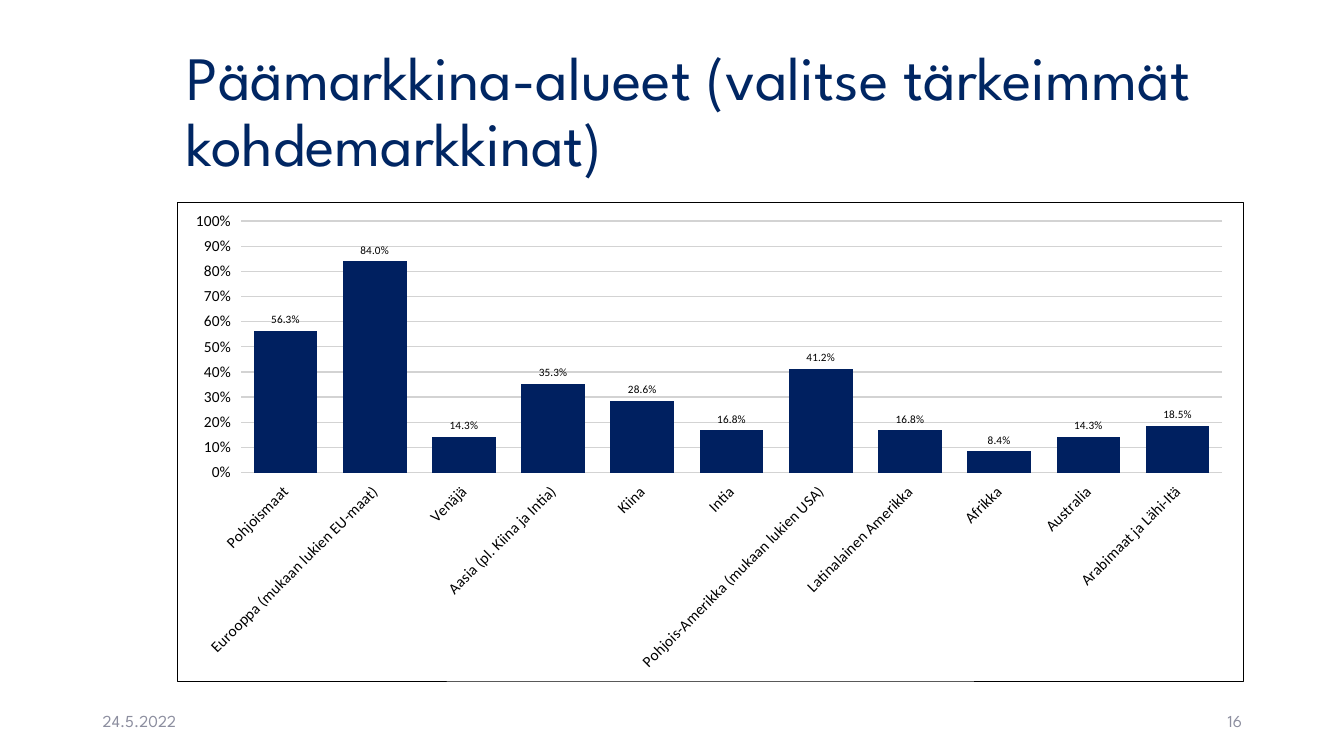
from dataclasses import dataclass

from lxml import etree
from pptx import Presentation
from pptx.chart.data import CategoryChartData
from pptx.dml.color import RGBColor
from pptx.enum.chart import XL_CHART_TYPE as ChartType
from pptx.enum.chart import XL_LABEL_POSITION as LabelPos
from pptx.enum.chart import XL_TICK_MARK as Tick
from pptx.enum.text import MSO_ANCHOR as Anchor
from pptx.enum.text import PP_ALIGN as Align
from pptx.oxml import parse_xml
from pptx.oxml.ns import nsdecls, qn
from pptx.util import Cm, Pt

NAVY, GREY = "002663", "8C8E9F"


@dataclass
class Label:
    text: str
    left: float
    top: float
    width: float
    height: float
    size: float
    color: str
    align: Align = Align.LEFT
    spacing: float = 1.0


@dataclass
class Market:
    name: str
    share: float


LABELS = [
    Label("Päämarkkina-alueet (valitse tärkeimmät kohdemarkkinat)",
          4.45, 1.02, 26.9, 3.68, 44, NAVY, spacing=0.9),
    Label("24.5.2022", 2.34, 17.65, 7.62, 1.02, 12, GREY),
    Label("16", 23.93, 17.65, 7.62, 1.02, 12, GREY, Align.RIGHT),
]

MARKETS = [
    Market("Pohjoismaat", 0.563),
    Market("Eurooppa (mukaan lukien EU-maat)", 0.84),
    Market("Venäjä", 0.143),
    Market("Aasia (pl. Kiina ja Intia)", 0.353),
    Market("Kiina", 0.286),
    Market("Intia", 0.168),
    Market("Pohjois-Amerikka (mukaan lukien USA)", 0.412),
    Market("Latinalainen Amerikka", 0.168),
    Market("Afrikka", 0.084),
    Market("Australia", 0.143),
    Market("Arabimaat ja Lähi-Itä", 0.185),
]


def rgb(color: str) -> RGBColor:
    return RGBColor.from_string(color)


def set_font(font, name: str, size: float, color: str) -> None:
    font.name, font.size = name, Pt(size)
    font.color.rgb = rgb(color)


def add_label(s, label: Label) -> None:
    sp = s.shapes.add_textbox(Cm(label.left), Cm(label.top), Cm(label.width), Cm(label.height))
    tf = sp.text_frame
    tf.word_wrap = True
    tf.vertical_anchor = Anchor.MIDDLE
    p = tf.paragraphs[0]
    p.text = label.text
    p.alignment = label.align
    p.line_spacing = label.spacing
    set_font(p.font, "League Spartan", label.size, label.color)


def area_format(line: str):
    return parse_xml(
        f'<c:spPr {nsdecls("c", "a")}><a:solidFill><a:srgbClr val="FFFFFF"/></a:solidFill>'
        f'{line}</c:spPr>')


def place_plot(plot_area, x: float, y: float, w: float, h: float) -> None:
    for old in plot_area.findall(qn("c:layout")):
        plot_area.remove(old)
    layout = etree.Element(qn("c:layout"))
    manual = etree.SubElement(layout, qn("c:manualLayout"))
    settings = {"layoutTarget": "inner", "xMode": "edge", "yMode": "edge",
                "x": x, "y": y, "w": w, "h": h}
    for tag, value in settings.items():
        etree.SubElement(manual, qn(f"c:{tag}")).set("val", str(value))
    plot_area.insert(0, layout)


def add_market_chart(s, markets: list[Market]) -> None:
    data = CategoryChartData(number_format="0.0%")
    data.categories = [m.name for m in markets]
    data.add_series("Series 1", [m.share for m in markets])
    chart = s.shapes.add_chart(ChartType.COLUMN_CLUSTERED, Cm(4.45), Cm(5.08),
                               Cm(26.9), Cm(12.09), data).chart
    chart.has_legend = False
    chart.has_title = False
    set_font(chart.font, "Calibri", 11, "000000")

    plot = chart.plots[0]
    plot.gap_width = 40
    plot.vary_by_categories = False
    fill = plot.series[0].format.fill
    fill.solid()
    fill.fore_color.rgb = rgb("002060")
    plot.has_data_labels = True
    labels = plot.data_labels
    labels.show_value = True
    labels.number_format, labels.number_format_is_linked = "0.0%", False
    labels.position = LabelPos.OUTSIDE_END
    set_font(labels.font, "Calibri", 8, "000000")

    shares, names = chart.value_axis, chart.category_axis
    for axis in (shares, names):
        axis.major_tick_mark = Tick.OUTSIDE
        axis.minor_tick_mark = Tick.NONE
        axis.format.line.fill.background()
        set_font(axis.tick_labels.font, "Calibri", 11, "000000")
    names._element.find(qn("c:txPr")).find(qn("a:bodyPr")).set("rot", "-2700000")
    shares.minimum_scale, shares.maximum_scale, shares.major_unit = 0, 1, 0.1
    shares.tick_labels.number_format = "0%"
    shares.tick_labels.number_format_is_linked = False
    grid = shares.major_gridlines.format.line
    grid.color.rgb, grid.width = rgb("D3D3D3"), Pt(1)

    chart_el = chart._chartSpace.find(qn("c:chart"))
    plot_area = chart_el.find(qn("c:plotArea"))
    place_plot(plot_area, 0.06, 0.04, 0.92, 0.525)
    plot_area.append(area_format("<a:ln><a:noFill/></a:ln>"))
    chart_el.addnext(area_format(
        '<a:ln w="6350"><a:solidFill><a:srgbClr val="000000"/></a:solidFill></a:ln>'))


def main() -> None:
    prs = Presentation()
    prs.slide_width, prs.slide_height = Cm(33.87), Cm(19.05)
    s = prs.slides.add_slide(prs.slide_layouts[6])
    for label in LABELS:
        add_label(s, label)
    add_market_chart(s, MARKETS)
    prs.save("out.pptx")


if __name__ == "__main__":
    main()
